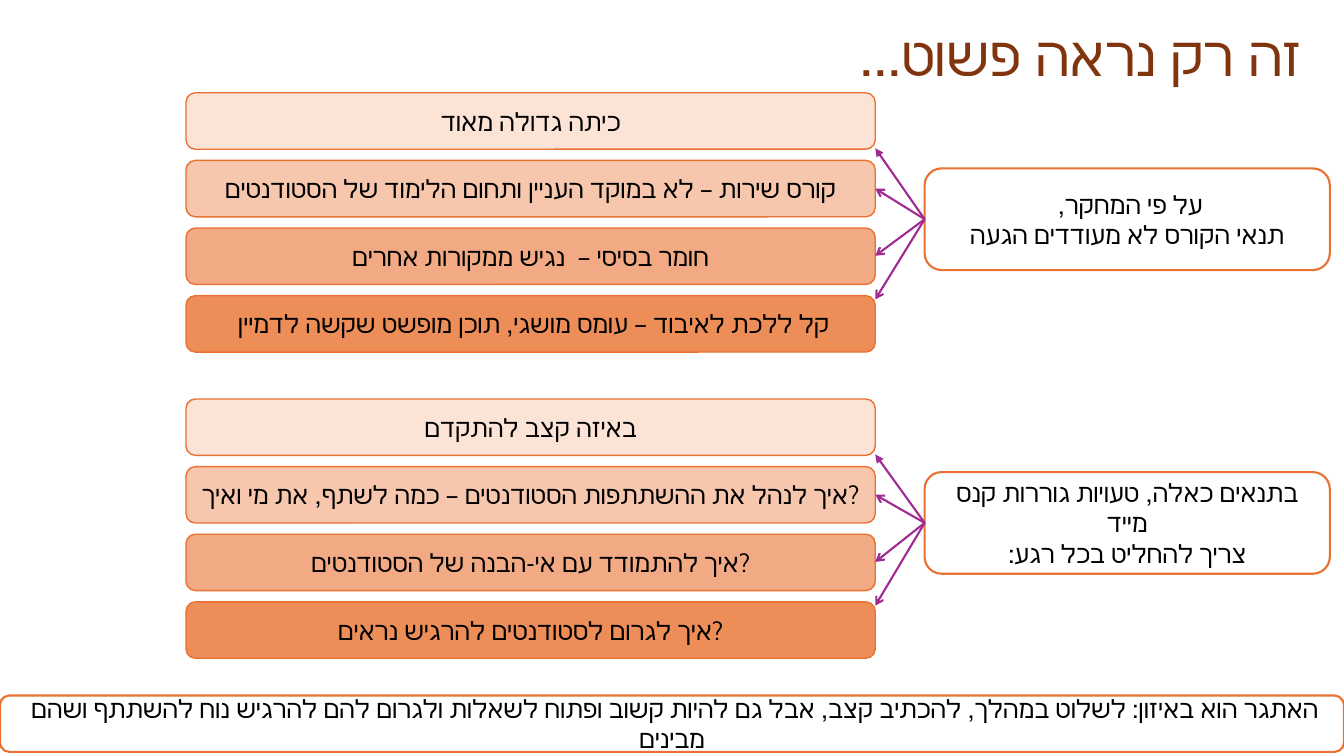
from dataclasses import dataclass
from lxml.etree import SubElement
from pptx import Presentation
from pptx.dml.color import RGBColor
from pptx.enum.lang import MSO_LANGUAGE_ID
from pptx.enum.shapes import MSO_CONNECTOR, MSO_SHAPE
from pptx.enum.text import MSO_ANCHOR, PP_ALIGN
from pptx.oxml.ns import qn
from pptx.util import Inches, Pt


@dataclass(frozen=True)
class Theme:
    title: str = "80350E"
    text: str = "000000"
    edge: str = "E97132"
    arrow: str = "A02B93"
    blank: str = "FFFFFF"
    shades: tuple = ("FBE3D6", "F6C6AD", "F2AA84", "ED8E59")
    head: str = "Calibri"
    body: str = "Cabin"
    large: float = 39.6
    small: float = 18
    thin: float = 1
    thick: float = 1.5


THEME = Theme()
WIDTH, HEIGHT = Inches(13.33), Inches(7.5)
COLS, ROWS = 80, 90
BAR_COL, BAR_SPAN = 11.07, 41.03
BAR_TALL, BAR_STEP = 6.72, 8.05
CAUSE_COL, CAUSE_SPAN, CAUSE_TALL = 55.04, 24.12, 12.1
TIPS = ((6.6, "triangle"), (11.4, "arrow"), (19.4, "arrow"), (24.6, "arrow"))

TITLE = "זה רק נראה פשוט... "
CLOSING = (
    "האתגר הוא באיזון: לשלוט במהלך, להכתיב קצב, אבל גם להיות קשוב "
    "ופתוח לשאלות ולגרום להם להרגיש נוח להשתתף ושהם  מבינים"
)
GROUPS = (
    (11.05, 20.05, "על פי המחקר, \vתנאי הקורס לא מעודדים הגעה", (
        ("כיתה גדולה מאוד", False),
        ("קורס שירות – לא במוקד העניין ותחום הלימוד של הסטודנטים", False),
        ("חומר בסיסי –  נגיש ממקורות אחרים", True),
        ("קל ללכת לאיבוד – עומס מושגי, תוכן מופשט שקשה לדמיין ", True),
    )),
    (47.5, 56.2, "בתנאים כאלה, טעויות גוררות קנס מייד\nצריך להחליט בכל רגע:", (
        ("באיזה קצב להתקדם", False),
        ("איך לנהל את ההשתתפות הסטודנטים – כמה לשתף, את מי ואיך?", False),
        ("איך להתמודד עם אי-הבנה של הסטודנטים?", False),
        ("איך לגרום לסטודנטים להרגיש נראים?", False),
    )),
)


def across(cols):
    return int(WIDTH * cols / COLS)


def down(rows):
    return int(HEIGHT * rows / ROWS)


def color(code):
    return RGBColor.from_string(code)


def write(frame, text, face, size, tint, align, rtl):
    frame.text = text
    frame.word_wrap = True
    frame.vertical_anchor = MSO_ANCHOR.MIDDLE
    for para in frame.paragraphs:
        para.alignment = align
        para._p.get_or_add_pPr().set("rtl", "1" if rtl else "0")
        for run in para.runs:
            font = run.font
            font.name = face
            font.size = Pt(size)
            font.color.rgb = color(tint)
            font.language_id = MSO_LANGUAGE_ID.HEBREW


def add_title(slide):
    title = slide.shapes.title
    title.left, title.top = across(9.1), down(2.5)
    title.width, title.height = across(69), down(9)
    write(title.text_frame, TITLE, THEME.head, THEME.large, THEME.title,
          PP_ALIGN.RIGHT, True)
    title.text_frame.paragraphs[0].line_spacing = 0.9


def add_box(slide, col, row, span, tall, text, fill, weight, rtl=True):
    box = slide.shapes.add_shape(
        MSO_SHAPE.ROUNDED_RECTANGLE,
        across(col), down(row), across(span), down(tall))
    box.shadow.inherit = False
    box.fill.solid()
    box.fill.fore_color.rgb = color(fill)
    box.line.color.rgb = color(THEME.edge)
    box.line.width = Pt(weight)
    write(box.text_frame, text, THEME.body, THEME.small, THEME.text,
          PP_ALIGN.CENTER, rtl)


def add_arrow(slide, start, end, head):
    arrow = slide.shapes.add_connector(
        MSO_CONNECTOR.STRAIGHT,
        across(start[0]), down(start[1]), across(end[0]), down(end[1]))
    arrow.line.color.rgb = color(THEME.arrow)
    arrow.line.width = Pt(THEME.thick)
    SubElement(arrow.line._get_or_add_ln(), qn("a:tailEnd"), type=head)
    SubElement(arrow._element.spPr, qn("a:effectLst"))


def add_group(slide, top, row, cause, bars):
    add_box(slide, CAUSE_COL, row, CAUSE_SPAN, CAUSE_TALL, cause,
            THEME.blank, THEME.thick)
    for rank, ((text, rtl), shade) in enumerate(zip(bars, THEME.shades)):
        add_box(slide, BAR_COL, top + rank * BAR_STEP, BAR_SPAN, BAR_TALL,
                text, shade, THEME.thin, rtl)
    start = (CAUSE_COL, row + CAUSE_TALL / 2)
    for drop, head in TIPS:
        add_arrow(slide, start, (BAR_COL + BAR_SPAN, top + drop), head)


def main():
    deck = Presentation()
    deck.slide_width, deck.slide_height = WIDTH, HEIGHT
    slide = deck.slides.add_slide(deck.slide_layouts.get_by_name("Title Only"))
    add_title(slide)
    for group in GROUPS:
        add_group(slide, *group)
    add_box(slide, 0, 82.8, COLS, BAR_TALL, CLOSING, THEME.blank, THEME.thick)
    deck.save("out.pptx")


if __name__ == "__main__":
    main()
